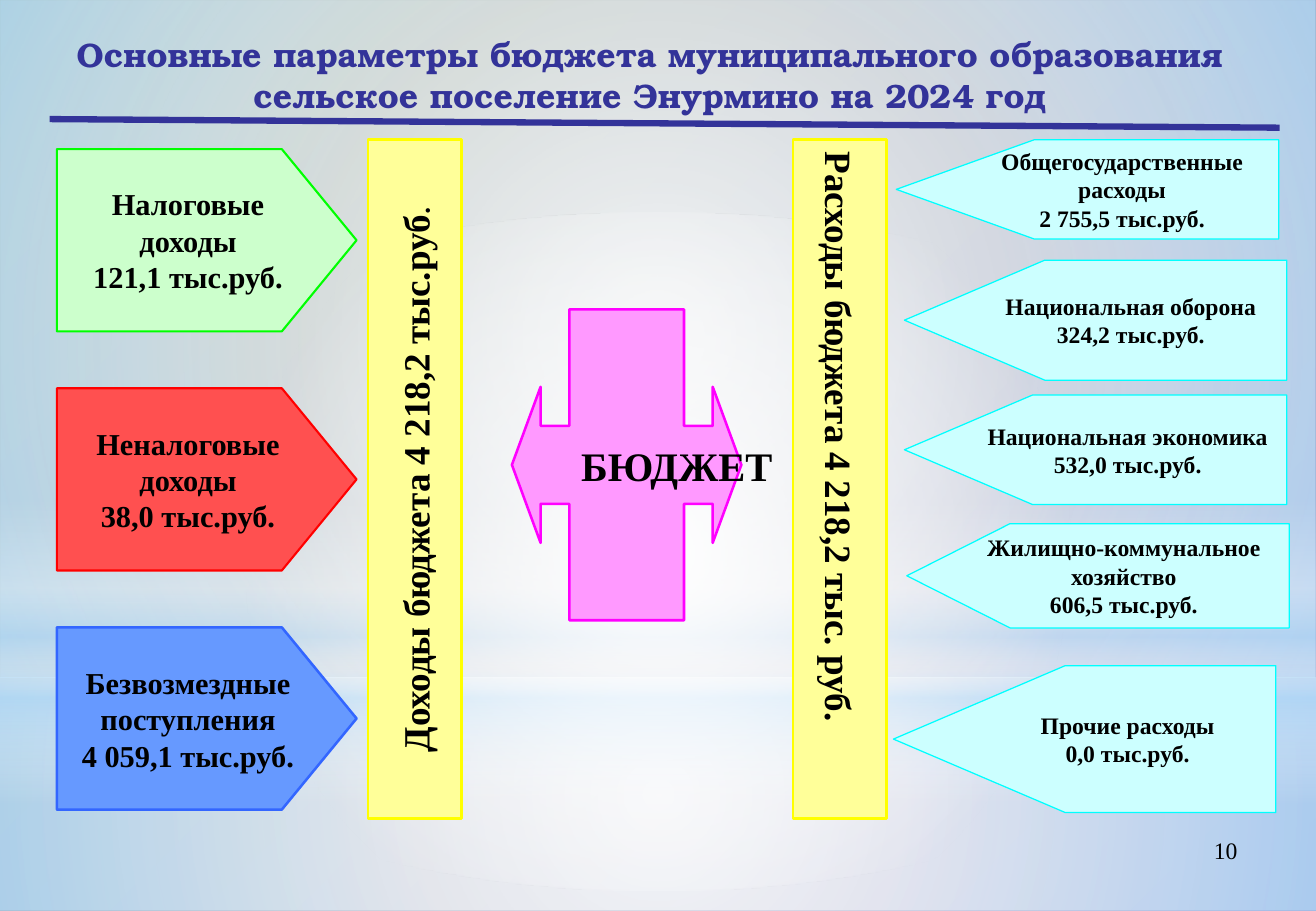
from pptx import Presentation
from pptx.dml.color import RGBColor
from pptx.enum.shapes import MSO_CONNECTOR, MSO_SHAPE
from pptx.enum.text import MSO_ANCHOR, PP_ALIGN
from pptx.oxml import parse_xml
from pptx.oxml.ns import nsdecls
from pptx.util import Cm, Pt

RECT, OVAL, PENTAGON = MSO_SHAPE.RECTANGLE, MSO_SHAPE.OVAL, MSO_SHAPE.PENTAGON
CALLOUT = MSO_SHAPE.UP_DOWN_ARROW_CALLOUT
CENTER, RIGHT, MIDDLE = PP_ALIGN.CENTER, PP_ALIGN.RIGHT, MSO_ANCHOR.MIDDLE

W, H = 27.53, 19.05
TITLE = "Основные параметры бюджета муниципального образования сельское поселение Энурмино на 2024 год"
NAVY = "333399"

# shape, top, height, gradient stops (position, colour, opacity), radial
BACKDROP = [
    (RECT, 14.17, 4.88, [(0, "FFFFFF", 91), (37, "FFFFFF", 76), (100, "B4DCFA", 79)], True),
    (RECT, 0, 14.17, [(0, "FFFFFF", 89), (48, "FFFFFF", 62), (100, "B4DCFA", 79)], True),
    (RECT, 10.46, 6.35, [(0, "FFFFFF", 0), (29, "FFFFFF", 30), (45, "B4DCFA", 40),
                         (55, "FFFFFF", 26), (65, "B4DCFA", 60), (100, "FFFFFF", 0)], False),
    (OVAL, 4.45, 14.17, [(0, "FFFFFF", 100), (56, "FFFFFF", 0)], True),
]

# lines, fill, outline, outline width
INCOME = [
    (["Налоговые доходы", "121,1 тыс.руб."], "CCFFCC", "00FF00", 1.25),
    (["Неналоговые доходы", "38,0 тыс.руб."], "FF5050", "FF0000", 1.25),
    (["Безвозмездные поступления", "4 059,1 тыс.руб."], "6699FF", "3366FF", 1.5),
]

# lines, left, top, height, point length, wrap
EXPENSES = [
    (["Общегосударственные", "расходы", "2 755,5 тыс.руб."], 18.75, 2.92, 2.08, 1.39, False),
    (["Национальная оборона", "324,2 тыс.руб."], 18.92, 5.44, 2.51, 1.17, False),
    (["Национальная экономика", "532,0 тыс.руб."], 18.92, 8.26, 2.29, 1.17, False),
    (["Жилищно-коммунальное хозяйство", "606,5 тыс.руб."], 18.97, 10.95, 2.18, 0.99, True),
    (["Прочие расходы", "0,0 тыс.руб."], 18.69, 13.92, 3.07, 1.17, False),
]

# runs (text, bold), left, text direction
TOTALS = [
    ([("Доходы бюджета 4 218,2 тыс.руб", True), (".", False)], 7.7, "vert270"),
    ([("Расходы бюджета 4 218,2 тыс. руб.", True)], 16.59, "eaVert"),
]


def rgb(value):
    return RGBColor.from_string(value)


def add_run(p, text, size=18, bold=True, font="Times New Roman", color="000000"):
    r = p.add_run()
    r.text = text
    r.font.size, r.font.bold, r.font.name = Pt(size), bold, font
    r.font.color.rgb = rgb(color)


def write(tf, lines, align=CENTER, anchor=MIDDLE, wrap=True, **fmt):
    """Fill a text frame, one paragraph per line; a line is a text or a list of (text, bold)."""
    tf.word_wrap, tf.vertical_anchor = wrap, anchor
    for i, line in enumerate(lines):
        p = tf.add_paragraph() if i else tf.paragraphs[0]
        p.alignment = align
        if isinstance(line, str):
            add_run(p, line, **fmt)
        else:
            for text, bold in line:
                add_run(p, text, bold=bold, **fmt)


def add_box(s, kind, box, fill, outline, width, adj=(), rotation=0, body=None):
    """Add a filled shape; body holds extra attributes of its text body."""
    sp = s.shapes.add_shape(kind, *map(Cm, box))
    sp.shadow.inherit = False
    sp.fill.solid()
    sp.fill.fore_color.rgb = rgb(fill)
    sp.line.color.rgb = rgb(outline)
    sp.line.width = Pt(width)
    sp.rotation = rotation
    for i, value in enumerate(adj):
        sp.adjustments[i] = value
    for name, value in (body or {}).items():
        sp.text_frame._txBody.bodyPr.set(name, value)
    return sp.text_frame


def gradient_xml(stops, radial):
    gs = "".join(
        f'<a:gs pos="{pos * 1000}"><a:srgbClr val="{color}"><a:alpha val="{alpha * 1000}"/>'
        f'</a:srgbClr></a:gs>' for pos, color, alpha in stops)
    shade = ('<a:path path="circle"><a:fillToRect l="50000" t="50000" r="50000" b="50000"/></a:path>'
             if radial else '<a:lin ang="5400000" scaled="0"/>')
    return parse_xml(f'<a:gradFill {nsdecls("a")} rotWithShape="1"><a:gsLst>{gs}</a:gsLst>{shade}</a:gradFill>')


def add_backdrop(s):
    fill = s.background.fill
    fill.gradient()
    fill.gradient_angle = 315
    for stop, color in zip(fill.gradient_stops, ("96AB94", "8488C4")):
        stop.color.rgb = rgb(color)
    for i, (kind, top, height, stops, radial) in enumerate(BACKDROP):
        sp = s.shapes.add_shape(kind, 0, Cm(top), Cm(W), Cm(height))
        sp.shadow.inherit = False
        sp.line.fill.background()
        sp._element.spPr.insert(2, gradient_xml(stops, radial))
        s.shapes._spTree.insert(2 + i, sp._element)


def main():
    prs = Presentation()
    prs.slide_width, prs.slide_height = Cm(W), Cm(H)
    s = prs.slides.add_slide(prs.slide_layouts[5])
    add_backdrop(s)

    title = s.shapes.title
    title.left, title.top, title.width, title.height = map(Cm, (0.79, 0.58, 25.6, 1.96))
    write(title.text_frame, [TITLE], size=20, font="TeX Gyre Bonum", color=NAVY)

    number = s.shapes.add_textbox(*map(Cm, (19.71, 17.35, 6.43, 1.32)))
    write(number.text_frame, ["10"], align=RIGHT, anchor=MSO_ANCHOR.TOP, size=14, bold=False)

    tf = add_box(s, CALLOUT, (9.86, 7.32, 6.5, 4.8), "FF99FF", "FF00FF", 1.5,
                 adj=(0.34, 0.34, 0.125, 0.5), rotation=270, body={"vert": "eaVert"})
    write(tf, ["БЮДЖЕТ"], wrap=False, size=24)

    for runs, left, direction in TOTALS:
        tf = add_box(s, RECT, (left, 2.92, 1.96, 14.2), "FFFF99", "FFFF00", 1.5,
                     body={"vert": direction})
        write(tf, [runs], wrap=False, size=22)

    for i, (lines, fill, outline, width) in enumerate(INCOME):
        tf = add_box(s, PENTAGON, (1.19, 3.12 + 5 * i, 6.27, 3.81), fill, outline, width, adj=(0.41,))
        write(tf, lines)

    for lines, left, top, height, point, wrap in EXPENSES:
        tf = add_box(s, PENTAGON, (left, top, 8, height), "CCFFFF", "00FFFF", 0.75,
                     adj=(point,), rotation=180, body={"rot": "10800000"})
        write(tf, lines, wrap=wrap, size=14)

    rule = s.shapes.add_connector(MSO_CONNECTOR.STRAIGHT, *map(Cm, (1.04, 2.49, 26.77, 2.67)))
    rule.line.color.rgb = rgb(NAVY)
    rule.line.width = Pt(3.75)
    rule._element.spPr.append(parse_xml(f'<a:effectLst {nsdecls("a")}/>'))

    prs.save("out.pptx")


if __name__ == "__main__":
    main()
